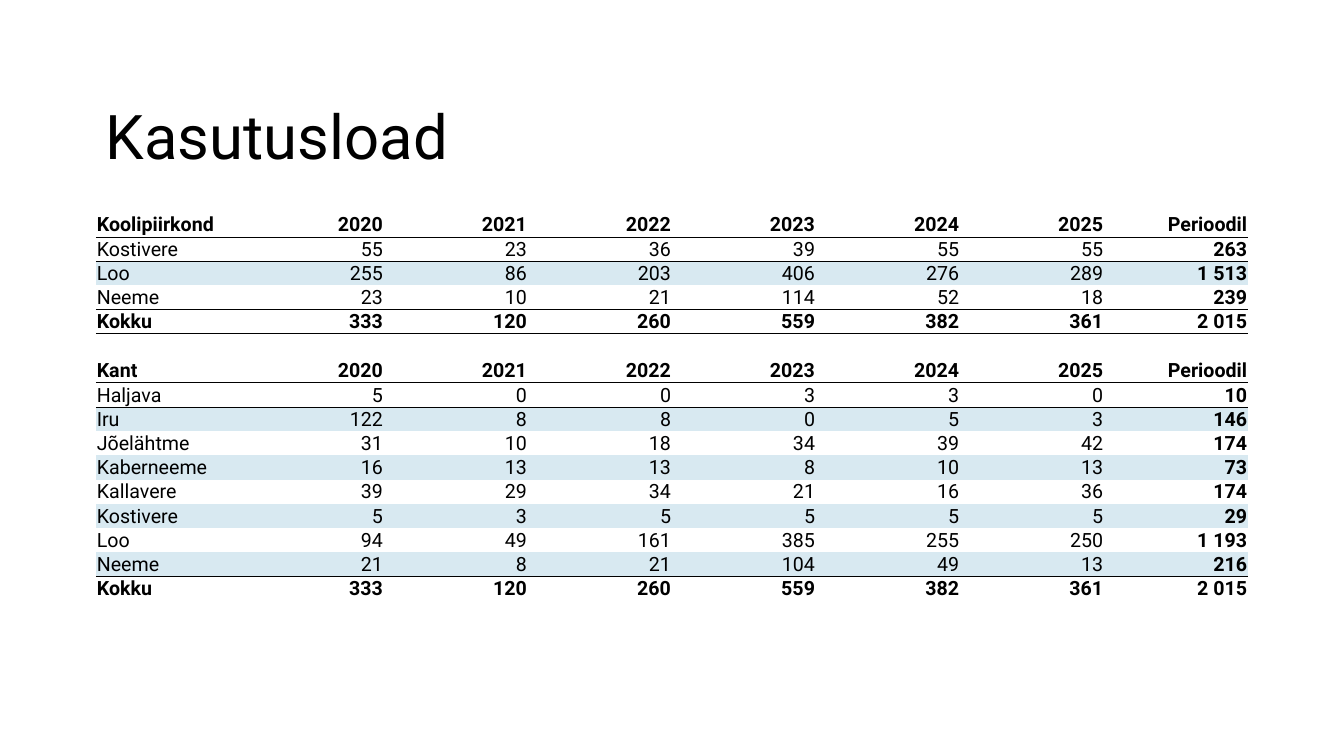
from dataclasses import dataclass

from lxml.etree import SubElement
from pptx import Presentation
from pptx.dml.color import RGBColor
from pptx.enum.text import MSO_ANCHOR as Anchor, MSO_AUTO_SIZE as AutoSize, PP_ALIGN as Align
from pptx.oxml.ns import qn
from pptx.util import Inches, Pt


@dataclass(frozen=True)
class Theme:
    font: str = "Roboto"
    title_size: int = 44
    table_size: int = 14
    rule_width: float = 0.5
    text: str = "000000"
    band: str = "D8E9F1"
    plain_table: str = "{2D5ABB26-0587-4C30-8999-92F81FD0307C}"


THEME = Theme()
LEFT, WIDTH = Inches(0.95), Inches(11.43)
YEARS = ["2020", "2021", "2022", "2023", "2024", "2025"]
TOTAL = ["Kokku", 333, 120, 260, 559, 382, 361, "2 015"]

# Each section: name of its first column and its body rows
SECTIONS = [
    ("Koolipiirkond", [
        ["Kostivere", 55, 23, 36, 39, 55, 55, 263],
        ["Loo", 255, 86, 203, 406, 276, 289, "1 513"],
        ["Neeme", 23, 10, 21, 114, 52, 18, 239],
    ]),
    ("Kant", [
        ["Haljava", 5, 0, 0, 3, 3, 0, 10],
        ["Iru", 122, 8, 8, 0, 5, 3, 146],
        ["Jõelähtme", 31, 10, 18, 34, 39, 42, 174],
        ["Kaberneeme", 16, 13, 13, 8, 10, 13, 73],
        ["Kallavere", 39, 29, 34, 21, 16, 36, 174],
        ["Kostivere", 5, 3, 5, 5, 5, 5, 29],
        ["Loo", 94, 49, 161, 385, 255, 250, "1 193"],
        ["Neeme", 21, 8, 21, 104, 49, 13, 216],
    ]),
]


def apply_format(target, values):
    for name, value in values.items():
        setattr(target, name, value)


def format_font(font, size, bold=False):
    apply_format(font, {"name": THEME.font, "size": Pt(size), "bold": bold})
    font.color.rgb = RGBColor.from_string(THEME.text)


def add_title(slide, text):
    title = slide.shapes.title
    apply_format(title, {"left": LEFT, "top": Inches(0.66),
                         "width": WIDTH, "height": Inches(1.45)})
    frame = title.text_frame
    apply_format(frame, {"text": text, "vertical_anchor": Anchor.MIDDLE,
                         "auto_size": AutoSize.NONE})
    paragraph = frame.paragraphs[0]
    apply_format(paragraph, {"alignment": Align.LEFT, "line_spacing": 0.9})
    format_font(paragraph.runs[0].font, THEME.title_size)


def add_rule(cell, side):
    line = SubElement(cell._tc.get_or_add_tcPr(), qn(f"a:{side}"),
                      w=str(Pt(THEME.rule_width)))
    fill = SubElement(line, qn("a:solidFill"))
    SubElement(fill, qn("a:srgbClr"), val=THEME.text)


def fill_cell(cell, value, align, bold, banded, rules):
    apply_format(cell, {"margin_left": Inches(0.01), "margin_right": Inches(0.01),
                        "margin_top": Inches(0.01), "margin_bottom": 0,
                        "vertical_anchor": Anchor.BOTTOM})
    for side in rules:
        add_rule(cell, side)
    if banded:
        cell.fill.solid()
        cell.fill.fore_color.rgb = RGBColor.from_string(THEME.band)
    else:
        cell.fill.background()

    paragraph = cell.text_frame.paragraphs[0]
    paragraph.alignment = align
    if value == "":
        # An empty cell keeps the row as low as the others
        paragraph._p.get_or_add_endParaRPr().set("sz", str(THEME.table_size * 100))
    else:
        run = paragraph.add_run()
        run.text = str(value)
        format_font(run.font, THEME.table_size, bold)


def section_rows(name, body):
    """Yield values, bold, banded and rules for every row of a section."""
    yield [name, *YEARS, "Perioodil"], True, False, ["lnB"]
    for index, values in enumerate(body):
        rules = []
        if index == 0:
            rules.append("lnT")
        if index == len(body) - 1:
            rules.append("lnB")
        yield values, False, index % 2 == 1, rules
    yield TOTAL, True, False, ["lnT"]


def add_permit_table(slide):
    rows = []
    for name, body in SECTIONS:
        if rows:
            rows.append(([""] * len(TOTAL), False, False, []))
        rows.extend(section_rows(name, body))

    frame = slide.shapes.add_table(len(rows), len(TOTAL), LEFT, Inches(2.11),
                                   WIDTH, Inches(3.81))
    table = frame.table
    apply_format(table, {"first_row": False, "horz_banding": False})
    table._tbl.tblPr.find(qn("a:tableStyleId")).text = THEME.plain_table

    last = len(TOTAL) - 1
    for row, (values, bold, banded, rules) in enumerate(rows):
        for column, value in enumerate(values):
            align = Align.RIGHT if column else Align.LEFT
            fill_cell(table.cell(row, column), value, align,
                      bold or column == last, banded, rules)


def main():
    presentation = Presentation()
    apply_format(presentation, {"slide_width": Inches(13.33), "slide_height": Inches(7.5)})
    title_only = presentation.slide_layouts[5]
    slide = presentation.slides.add_slide(title_only)
    add_title(slide, "Kasutusload")
    add_permit_table(slide)
    presentation.save("out.pptx")


if __name__ == "__main__":
    main()
